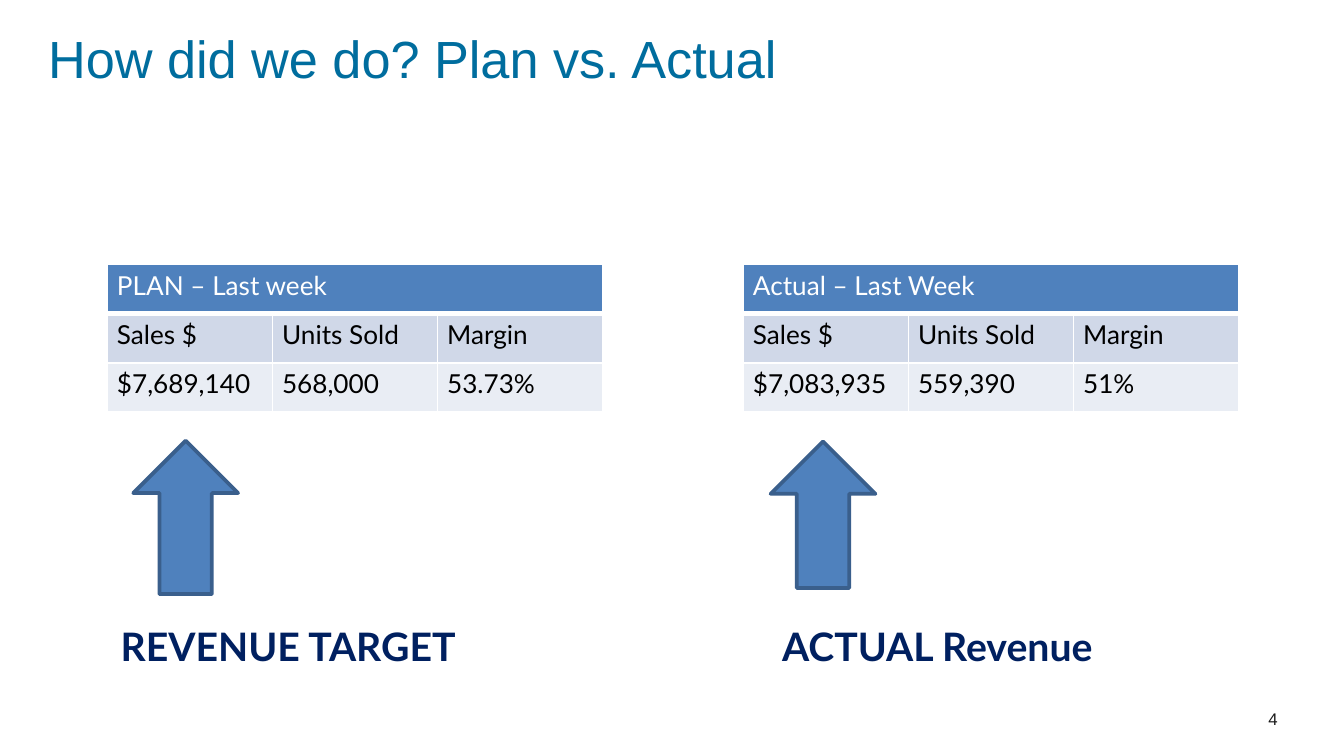
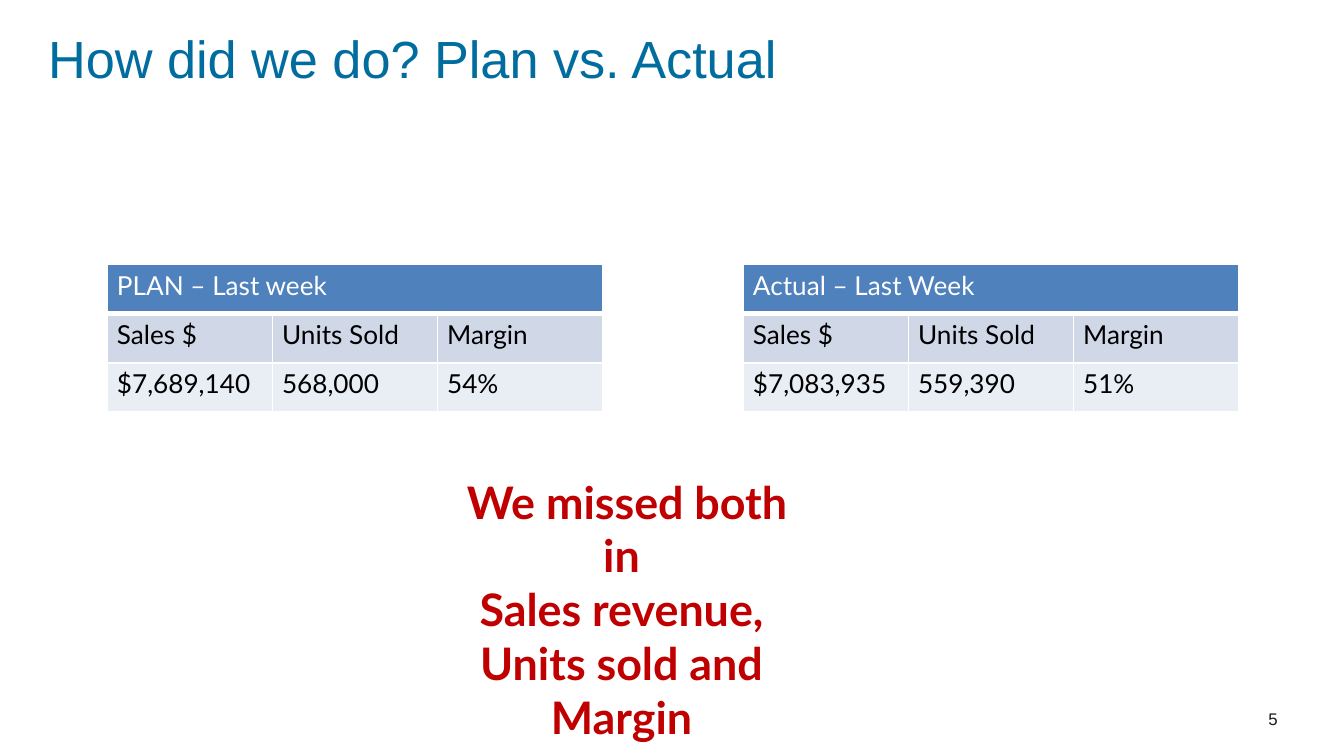
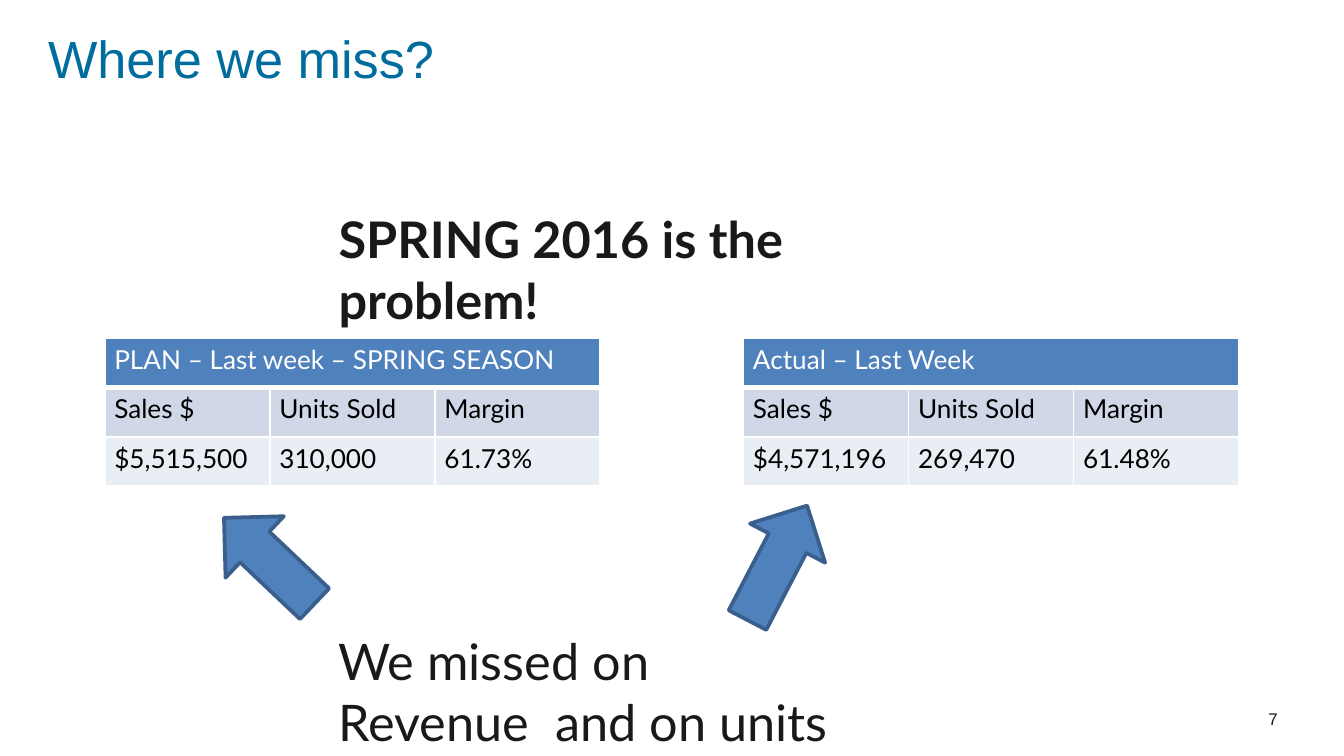
"""Builds three slides that compare planned and actual weekly sales."""
from lxml.etree import SubElement as Sub
from pptx import Presentation
from pptx.dml.color import RGBColor as Rgb
from pptx.enum.shapes import MSO_SHAPE as Kind
from pptx.enum.text import MSO_ANCHOR as Anchor, PP_ALIGN as Align
from pptx.oxml.ns import qn
from pptx.util import Cm, Pt

INK = {
    "title": "006D9E", "body": "191919", "navy": "002060", "red": "C00000",
    "blue": "4F81BD", "edge": "3A5F8C", "head": "D0D8E8", "pale": "E9EDF4",
    "white": "FFFFFF", "black": "000000",
}
HEADS = ("Sales $", "Units Sold", "Margin")
LEFT, RIGHT = 2.03, 14.05
GRID = (9.36, 2.79)
ACTUAL = "Actual – Last Week"


def tint(name):
    """Return the named colour."""
    return Rgb.from_string(INK[name])


def write(para, words, size, ink, face="Lato", bold=False):
    """Add one styled run to a paragraph."""
    run = para.add_run()
    run.text = words
    font = run.font
    font.name, font.size, font.bold = face, Pt(size), bold
    font.color.rgb = tint(ink)


def label(slide, box, lines, size, ink, face="Lato", bold=False,
          align=Align.LEFT, space=1.0, inset=None, anchor=Anchor.TOP):
    """Place a wrapped text box with one paragraph per line."""
    frame = slide.shapes.add_textbox(*map(Cm, box)).text_frame
    frame.word_wrap = True
    frame.vertical_anchor = anchor
    if inset is not None:
        frame.margin_left = frame.margin_right = Cm(inset)
        frame.margin_top = frame.margin_bottom = Cm(inset)
    for i, words in enumerate(lines):
        para = frame.add_paragraph() if i else frame.paragraphs[0]
        para.alignment, para.line_spacing = align, space
        write(para, words, size, ink, face, bold)


def rule(cell, side, width):
    """Draw a white border on one side of a cell."""
    line = Sub(cell._tc.get_or_add_tcPr(), qn(f"a:ln{side}"), w=str(Pt(width)))
    Sub(Sub(line, qn("a:solidFill")), qn("a:srgbClr"), val=INK["white"])


def fill_cell(cell, words, ink, back, base=1):
    """Style a table cell and write its text."""
    for side in "LRT":
        rule(cell, side, 1)
    rule(cell, "B", base)
    cell.fill.solid()
    cell.fill.fore_color.rgb = tint(back)
    cell.margin_left = cell.margin_right = Cm(0.18)
    cell.margin_top = cell.margin_bottom = Cm(0.1)
    if words:
        write(cell.text_frame.paragraphs[0], words, 14, ink)


def sales(slide, box, name, values):
    """Place a sales table with a merged heading row."""
    wide = len(HEADS)
    grid = slide.shapes.add_table(3, wide, *map(Cm, box)).table
    grid.first_row = grid.horz_banding = False
    grid.cell(0, 0).merge(grid.cell(0, wide - 1))
    for col, (head, value) in enumerate(zip(HEADS, values)):
        fill_cell(grid.cell(0, col), "" if col else name, "white", "blue", 3)
        fill_cell(grid.cell(1, col), head, "black", "head")
        fill_cell(grid.cell(2, col), value, "black", "pale")


def arrow(slide, box, kind, turn):
    """Place a turned block arrow."""
    form = slide.shapes.add_shape(kind, *map(Cm, box))
    form.shadow.inherit = False
    form.rotation = turn
    form.fill.solid()
    form.fill.fore_color.rgb = tint("blue")
    form.line.color.rgb = tint("edge")
    form.line.width = Pt(2)


def start(deck, title, number):
    """Add a slide with its title and page number."""
    slide = deck.slides.add_slide(deck.slide_layouts[6])
    label(slide, (0.91, 0.61, 23.5, 1.09), [title], 28, "title", "Arial",
          space=0.9, inset=0, anchor=Anchor.BOTTOM)
    label(slide, (23.72, 13.31, 1.12, 1.02), [str(number)], 9, "body",
          "Arial", space=0.9)
    return slide


def pair(slide, top, plan, actual, left=LEFT):
    """Place the plan and actual tables side by side."""
    for x, (name, *values) in ((left, plan), (RIGHT, actual)):
        sales(slide, (x, top, *GRID), name, values)


def main():
    """Build and save the deck."""
    deck = Presentation()
    deck.slide_width, deck.slide_height = Cm(25.4), Cm(14.29)
    plan = ("PLAN – Last week", "$7,689,140", "568,000")
    actual = (ACTUAL, "$7,083,935", "559,390", "51%")
    ask = "How did we do? Plan vs. Actual"

    slide = start(deck, ask, 4)
    pair(slide, 5, (*plan, "53.73%"), actual)
    for box, x, words in (
        ((2.06, 8.79, 2.9, 1.98), 2.03, "REVENUE TARGET"),
        ((14.17, 8.74, 2.77, 1.98), 14.53, "ACTUAL Revenue"),
    ):
        arrow(slide, box, Kind.RIGHT_ARROW, 270)
        label(slide, (x, 11.63, 8.38, 1.14), [words], 21, "navy", bold=True)

    slide = start(deck, ask, 5)
    pair(slide, 5, (*plan, "54%"), actual)
    label(slide, (8.2, 8.84, 7.3, 4.37),
          ["We missed both in ", "Sales revenue, ", "Units sold and ",
           "Margin "], 24, "red", bold=True, align=Align.CENTER)

    slide = start(deck, "Where we miss?", 7)
    pair(slide, 6.4,
         ("PLAN – Last week – SPRING SEASON", "$5,515,500", "310,000",
          "61.73%"),
         (ACTUAL, "$4,571,196", "269,470", "61.48%"), left=1.98)
    label(slide, (6.15, 11.79, 9.8, 2.57),
          ["We missed on Revenue  and on units"], 27, "body")
    label(slide, (6.15, 3.81, 12.5, 1.42),
          ["SPRING 2016 is the problem!"], 27, "body", bold=True)
    arrow(slide, (4.29, 9.42, 1.6, 2.36), Kind.UP_ARROW, 313.5)
    arrow(slide, (13.89, 9.42, 1.6, 2.44), Kind.UP_ARROW, 27.5)

    deck.save("out.pptx")


if __name__ == "__main__":
    main()
